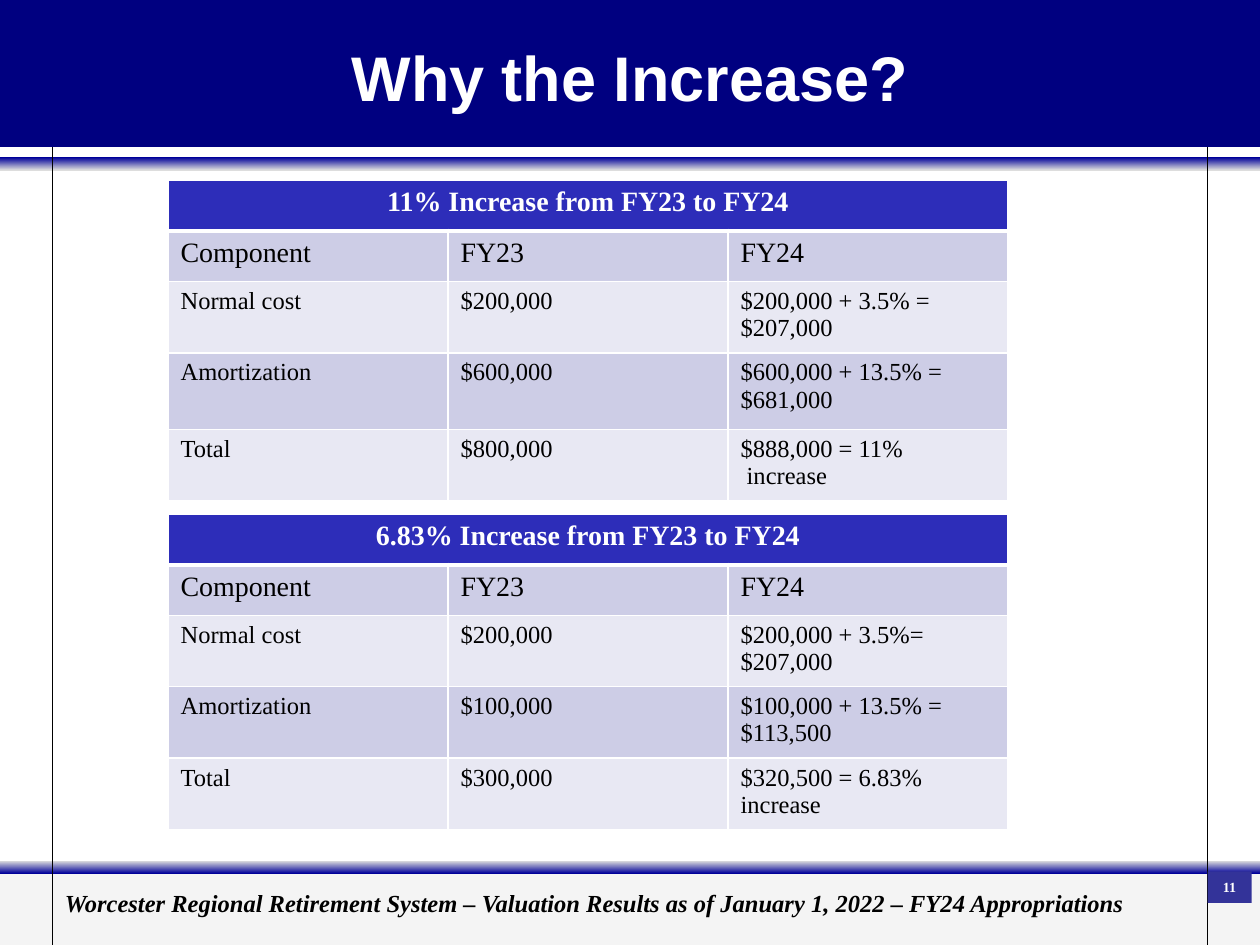
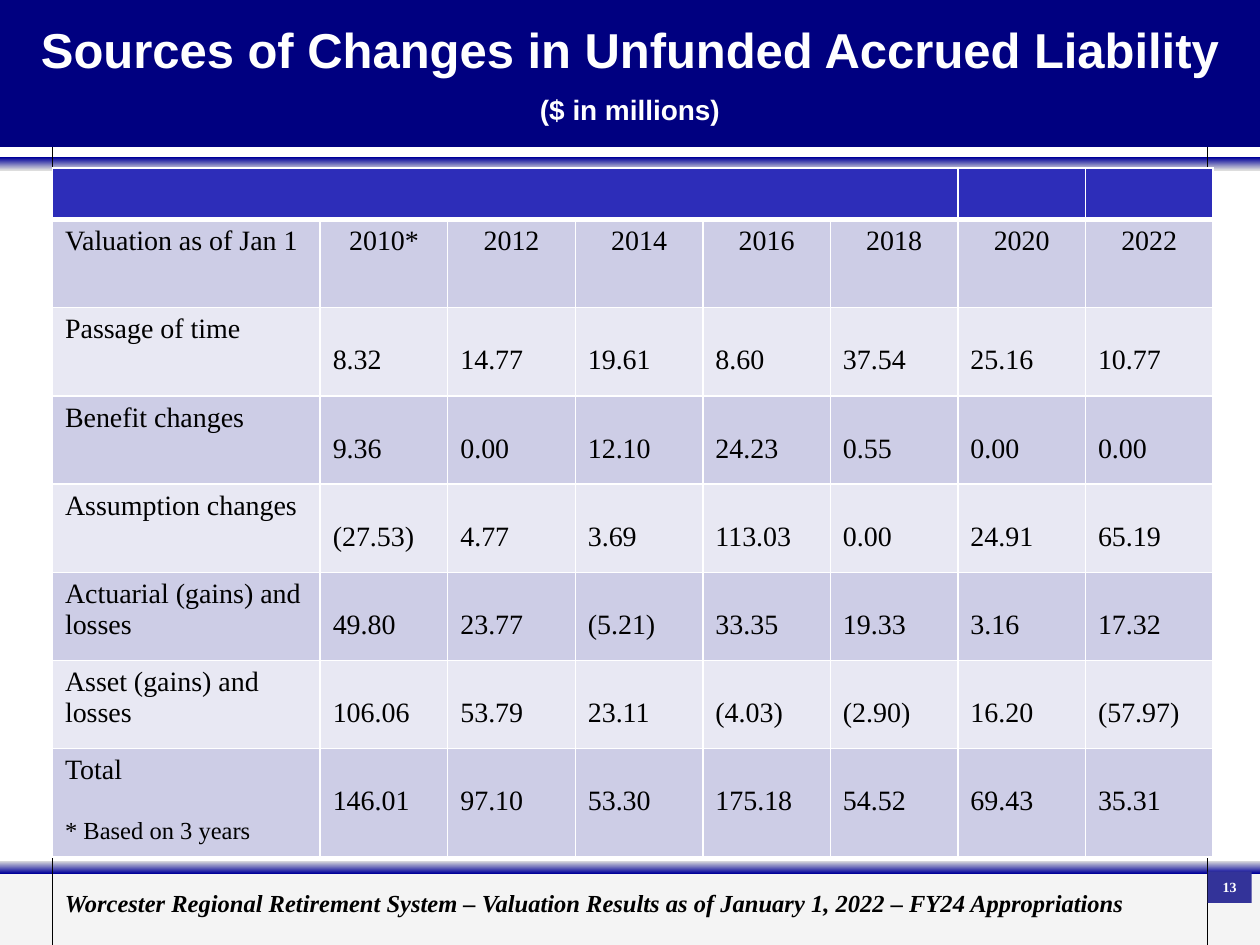
from dataclasses import dataclass

from lxml.etree import SubElement
from pptx import Presentation
from pptx.dml.color import RGBColor
from pptx.enum.shapes import MSO_CONNECTOR, MSO_SHAPE
from pptx.enum.text import MSO_ANCHOR, MSO_AUTO_SIZE, PP_ALIGN
from pptx.oxml.ns import qn
from pptx.util import Inches, Pt


@dataclass(frozen=True)
class Theme:
    heading_font: str = "Arial"
    body_font: str = "Times New Roman"
    white: str = "FFFFFF"
    black: str = "000000"
    banner: str = "000080"
    stripe_dark: str = "000099"
    stripe_light: str = "DDDDDD"
    footer_band: str = "EAEAEA"
    number_tag: str = "333399"
    header_fill: str = "2D2DB9"
    row_fills: tuple = ("CDCDE6", "E8E8F3")
    title: int = 36
    long_title: int = 28
    large: int = 16
    body: int = 14
    tiny: int = 8


THEME = Theme()
WIDTH, HEIGHT = Inches(10), Inches(7.5)
COLUMNS, ROWS = 24, 90
FOOTER = ("Worcester Regional Retirement System – Valuation Results "
          "as of January 1, 2022 – FY24 Appropriations")

INCREASE_COLUMNS = [16 / 3] * 3
INCREASE_11 = [
    ["11% Increase from FY23 to FY24", "", ""],
    ["Component", "FY23", "FY24"],
    ["Normal cost", "$200,000", "$200,000 + 3.5% = $207,000"],
    ["Amortization", "$600,000", "$600,000 + 13.5% = $681,000"],
    ["Total", "$800,000", "$888,000 = 11%\n increase"],
]
INCREASE_683 = [
    ["6.83% Increase from FY23 to FY24", "", ""],
    ["Component", "FY23", "FY24"],
    ["Normal cost", "$200,000", "$200,000 + 3.5%= $207,000"],
    ["Amortization", "$100,000", "$100,000 + 13.5% = $113,500"],
    ["Total", "$300,000", "$320,500 = 6.83% increase"],
]
LIABILITY = [
    [""] * 8,
    ["Valuation as of Jan 1", "2010*", "2012", "2014", "2016", "2018", "2020", "2022"],
    ["Passage of time", "8.32", "14.77", "19.61", "8.60", "37.54", "25.16", "10.77"],
    ["Benefit changes", "9.36", "0.00", "12.10", "24.23", "0.55", "0.00", "0.00"],
    ["Assumption changes", "(27.53)", "4.77", "3.69", "113.03", "0.00", "24.91", "65.19"],
    ["Actuarial (gains) and losses", "49.80", "23.77", "(5.21)", "33.35", "19.33", "3.16", "17.32"],
    ["Asset (gains) and losses", "106.06", "53.79", "23.11", "(4.03)", "(2.90)", "16.20", "(57.97)"],
    ["Total", "146.01", "97.10", "53.30", "175.18", "54.52", "69.43", "35.31"],
]


def col(n):
    return round(WIDTH * n / COLUMNS)


def row(n):
    return round(HEIGHT * n / ROWS)


def area(left, top, width, height):
    return col(left), row(top), col(width), row(height)


def rgb(color):
    return RGBColor.from_string(color)


def add_run(p, text, size, color=THEME.black, font=THEME.body_font, bold=False, italic=False):
    r = p.add_run()
    r.text = text
    f = r.font
    f.name, f.size, f.bold, f.italic = font, Pt(size), bold, italic
    f.color.rgb = rgb(color)


def add_paragraph(tf, first, align=PP_ALIGN.LEFT, before=0):
    p = tf.paragraphs[0] if first else tf.add_paragraph()
    p.alignment, p.space_before = align, Pt(before)
    return p


def add_box(s, place, color=None):
    sp = s.shapes.add_shape(MSO_SHAPE.RECTANGLE, *area(*place))
    sp.shadow.inherit = False
    sp.line.fill.background()
    if color:
        sp.fill.solid()
        sp.fill.fore_color.rgb = rgb(color)
    return sp


def add_stripe(s, top, colors):
    """Draw a thin full-width bar that fades from the first colour down to the second."""
    sp = add_box(s, (0, top, COLUMNS, 1.2))
    sp.fill.gradient()
    sp.fill.gradient_angle = 270
    for stop, position, color in zip(sp.fill.gradient_stops, (0, 1), colors):
        stop.position = position
        stop.color.rgb = rgb(color)


def add_guide(s, at):
    line = s.shapes.add_connector(MSO_CONNECTOR.STRAIGHT, col(at), row(14), col(at), HEIGHT)
    line.line.color.rgb = rgb(THEME.black)
    line.line.width = Pt(0.75)
    SubElement(line.element.spPr, qn("a:effectLst"))


def add_footer(s):
    tf = s.shapes.add_textbox(*area(1, 84, 21.6, 4)).text_frame
    tf.word_wrap = True
    add_run(add_paragraph(tf, True), FOOTER, THEME.body, bold=True, italic=True)


def build_layout(prs):
    """Give the Title Only layout the bands, guides and footer that all slides share."""
    layout = prs.slide_layouts[5]
    for holder in list(layout.placeholders)[1:]:
        layout.shapes.element.remove(holder.element)
    s = prs.slides.add_slide(layout)
    add_stripe(s, 15, (THEME.stripe_dark, THEME.stripe_light))
    band = add_box(s, (0, 83, COLUMNS, 7), THEME.footer_band)
    color = band.element.spPr.find(qn("a:solidFill"))[0]
    SubElement(color, qn("a:alpha")).set("val", "50000")
    add_stripe(s, 82, (THEME.stripe_light, THEME.stripe_dark))
    for at in (1, COLUMNS - 1):
        add_guide(s, at)
    add_footer(s)
    add_box(s, (0, 0, COLUMNS, 14), THEME.banner)
    drawn = [sp for sp in s.shapes if not sp.is_placeholder]
    for i, sp in enumerate(drawn):
        sp.element.xpath(".//p:cNvPr")[0].set("id", str(20 + i))
        layout.shapes.element.insert(2 + i, sp.element)
    return layout, s


def add_title(s, lines, top, height):
    title = s.shapes.title
    title.left, title.top, title.width, title.height = area(0, top, COLUMNS, height)
    tf = title.text_frame
    tf.word_wrap, tf.auto_size = True, MSO_AUTO_SIZE.NONE
    tf.vertical_anchor = MSO_ANCHOR.MIDDLE
    for i, (text, size) in enumerate(lines):
        p = add_paragraph(tf, i == 0, PP_ALIGN.CENTER, size / 2 if i else 0)
        add_run(p, text, size, THEME.white, THEME.heading_font, bold=True)


def add_number(s, number):
    sp = add_box(s, (COLUMNS - 1, 83, 0.84, 3), THEME.number_tag)
    tf = sp.text_frame
    tf.margin_left = tf.margin_right = 0
    tf.vertical_anchor = MSO_ANCHOR.MIDDLE
    p = add_paragraph(tf, True, PP_ALIGN.CENTER)
    add_run(p, number, THEME.tiny, THEME.white, bold=True)


def set_borders(cell, top=1, bottom=1):
    tc_pr = cell._tc.get_or_add_tcPr()
    for i, (side, width) in enumerate(zip("LRTB", (1, 1, top, bottom))):
        ln = SubElement(tc_pr, qn(f"a:ln{side}"), w=str(Pt(width)))
        fill = SubElement(ln, qn("a:solidFill"))
        SubElement(fill, qn("a:srgbClr"), val=THEME.white)
        tc_pr.insert(i, ln)


def add_grid(s, left, top, columns, rows, header_span, data, write_cell):
    """Add a table with a merged header row; write_cell fills in each cell's text."""
    frame = s.shapes.add_table(len(rows), len(columns), *area(left, top, sum(columns), sum(rows)))
    table = frame.table
    for column, width in zip(table.columns, columns):
        column.width = col(width)
    for i, height in enumerate(rows):
        table.rows[i].height = row(height)
        for j, text in enumerate(data[i]):
            cell = table.cell(i, j)
            cell.fill.solid()
            color = THEME.row_fills[(i - 1) % 2] if i else THEME.header_fill
            cell.fill.fore_color.rgb = rgb(color)
            set_borders(cell, 3 if i == 1 else 1, 1 if i else 3)
            if text:
                write_cell(cell, i, j, text)
    table.cell(0, 0).merge(table.cell(0, header_span - 1))


def write_increase_cell(cell, i, j, text):
    size = THEME.large if i < 2 else THEME.body
    align = PP_ALIGN.LEFT if i else PP_ALIGN.CENTER
    color = THEME.black if i else THEME.white
    for n, line in enumerate(text.split("\n")):
        p = add_paragraph(cell.text_frame, n == 0, align)
        add_run(p, line, size, color, bold=i == 0)


def write_liability_cell(cell, i, j, text):
    """Centre the years and set the amounts one line below their row labels."""
    if i > 1 and j:
        cell.margin_top = row(3.55)
    align = PP_ALIGN.CENTER if i == 1 and j else PP_ALIGN.LEFT
    add_run(add_paragraph(cell.text_frame, True, align), text, THEME.large)
    if text == "Total":
        note = add_paragraph(cell.text_frame, False, before=18)
        add_run(note, "* Based on 3 years", THEME.body)


def main():
    prs = Presentation()
    prs.slide_width, prs.slide_height = WIDTH, HEIGHT
    layout, s = build_layout(prs)

    add_number(s, "11")
    add_title(s, [("Why the Increase?", THEME.title)], 3, 8.5)
    for top, amortization_row, data in ((17.2, 7.3, INCREASE_11), (49, 6.8, INCREASE_683)):
        rows = [4.8, 4.8, 6.8, amortization_row, 6.8]
        add_grid(s, 3.2, top, INCREASE_COLUMNS, rows, 3, data, write_increase_cell)

    s = prs.slides.add_slide(layout)
    add_number(s, "13")
    add_title(s, [("Sources of Changes in Unfunded Accrued Liability", THEME.long_title),
                  ("($ in millions)", THEME.large)], 1, 11.8)
    add_grid(s, 1, 16, [5.1] + [2.43] * 7, [4.9] + [8.4] * 6 + [10.3], 6,
             LIABILITY, write_liability_cell)

    prs.save("out.pptx")


if __name__ == "__main__":
    main()
